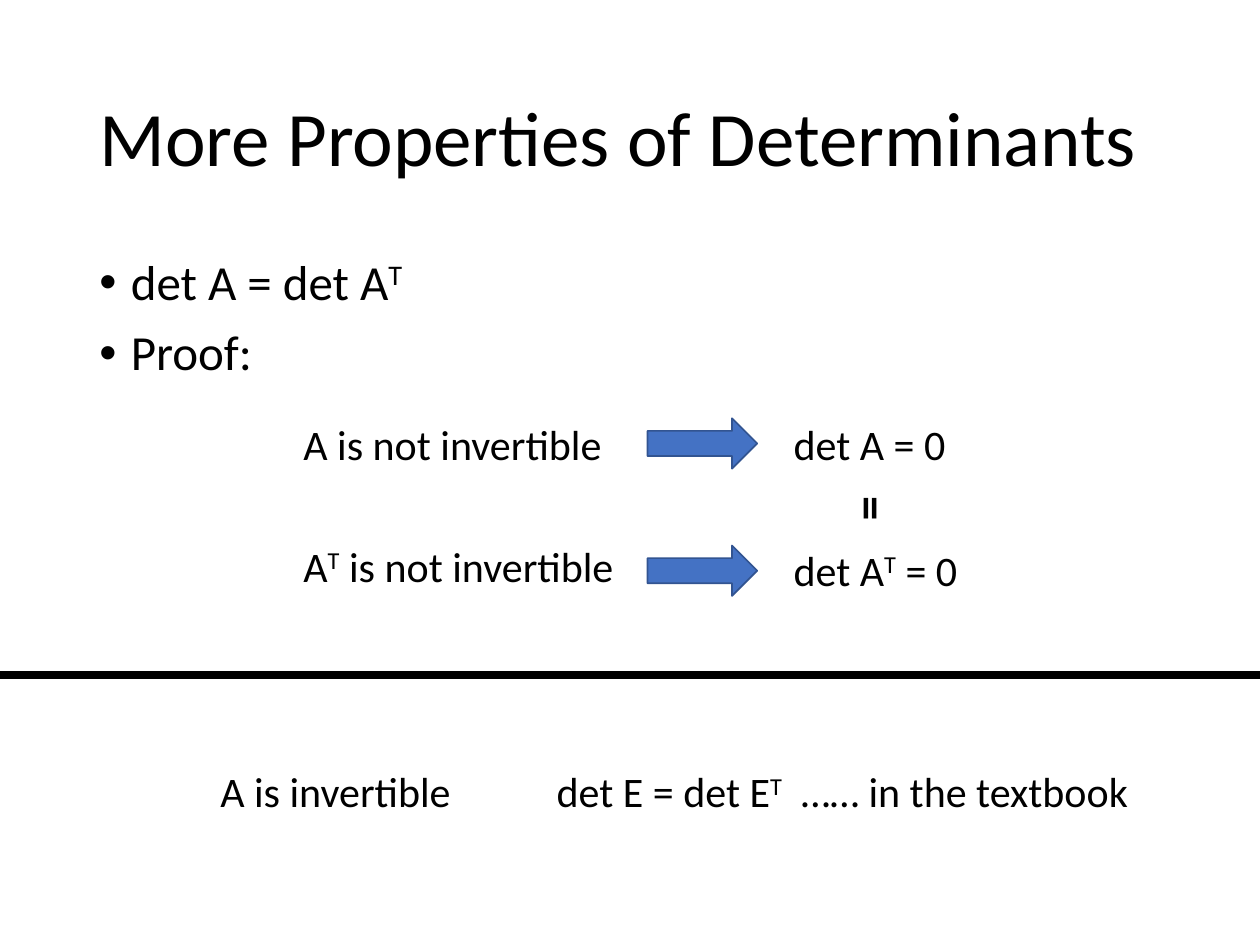
from dataclasses import dataclass

from lxml.etree import SubElement
from pptx import Presentation
from pptx.dml.color import RGBColor
from pptx.enum.shapes import MSO_CONNECTOR, MSO_SHAPE
from pptx.enum.text import MSO_ANCHOR, MSO_AUTO_SIZE, PP_ALIGN
from pptx.oxml.ns import qn
from pptx.slide import Slide
from pptx.util import Inches, Pt

COLORS = {"text": "000000", "divider": "000000", "arrow": "4472C4", "arrow_edge": "325491"}
FONT = "Calibri"
SUPERSCRIPT_MARK = "^"


@dataclass
class Label:
    lines: tuple[str, ...]
    left: float
    top: float
    width: float
    height: float = 0.5
    size: int = 24
    bold: bool = False
    bullet: bool = False
    wrap: bool = True
    grow: bool = True
    line_spacing: float = 1.0
    space_before: int = 0
    anchor: MSO_ANCHOR = MSO_ANCHOR.TOP
    align: PP_ALIGN = PP_ALIGN.LEFT
    rotation: int = 0


@dataclass
class Implication:
    premise: str
    conclusion: str
    premise_top: float
    arrow_top: float
    conclusion_top: float


LABELS = (
    Label(("More Properties of Determinants",), 0.69, 0.4, 8.62, 1.45, size=44,
          grow=False, line_spacing=0.9, anchor=MSO_ANCHOR.MIDDLE),
    Label(("det A = det A^T", "Proof:"), 0.69, 2, 8.62, 4.76, size=28,
          bullet=True, grow=False, line_spacing=0.9, space_before=10),
    Label(("A is invertible",), 1.65, 6.03, 2.67),
    Label(("det E = det E^T^  …… in the textbook",), 4.32, 6.03, 4.79, wrap=False),
    Label(("=",), 6.48, 3.75, 0.91, 0.57, size=28, bold=True,
          align=PP_ALIGN.CENTER, rotation=90),
)

IMPLICATIONS = (
    Implication("A is not invertible", "det A = 0", 3.27, 3.32, 3.27),
    Implication("A^T^ is not invertible", "det A^T^ = 0", 4.24, 4.33, 4.27),
)


def color(name: str) -> RGBColor:
    return RGBColor.from_string(COLORS[name])


def add_spans(para, line: str) -> None:
    for index, piece in enumerate(line.split(SUPERSCRIPT_MARK)):
        span = para.add_run()
        span.text = piece
        if index % 2:
            span._r.get_or_add_rPr().set("baseline", "30000")


def add_bullet(para) -> None:
    properties = para._p.get_or_add_pPr()
    properties.set("marL", str(Inches(0.25)))
    properties.set("indent", str(-Inches(0.25)))
    SubElement(properties, qn("a:buFont")).set("typeface", "Arial")
    SubElement(properties, qn("a:buChar")).set("char", "•")


def add_label(page: Slide, label: Label) -> None:
    box = page.shapes.add_textbox(
        Inches(label.left), Inches(label.top), Inches(label.width), Inches(label.height))
    box.rotation = label.rotation
    frame = box.text_frame
    frame.word_wrap = label.wrap
    frame.vertical_anchor = label.anchor
    frame.auto_size = MSO_AUTO_SIZE.SHAPE_TO_FIT_TEXT if label.grow else MSO_AUTO_SIZE.NONE
    for index, line in enumerate(label.lines):
        para = frame.add_paragraph() if index else frame.paragraphs[0]
        para.alignment = label.align
        para.line_spacing = label.line_spacing
        para.space_before = Pt(label.space_before)
        if label.bullet:
            add_bullet(para)
        para.font.name = FONT
        para.font.size = Pt(label.size)
        para.font.bold = label.bold
        para.font.color.rgb = color("text")
        add_spans(para, line)


def add_arrow(page: Slide, top: float) -> None:
    arrow = page.shapes.add_shape(
        MSO_SHAPE.RIGHT_ARROW, Inches(5.14), Inches(top), Inches(0.87), Inches(0.4))
    arrow.shadow.inherit = False
    arrow.fill.solid()
    arrow.fill.fore_color.rgb = color("arrow")
    arrow.line.color.rgb = color("arrow_edge")
    arrow.line.width = Pt(1)


def add_implication(page: Slide, step: Implication) -> None:
    add_label(page, Label((step.premise,), 2.31, step.premise_top, 2.67))
    add_arrow(page, step.arrow_top)
    add_label(page, Label((step.conclusion,), 6.2, step.conclusion_top, 2.81))


def add_divider(page: Slide, top: float, width: float) -> None:
    divider = page.shapes.add_connector(
        MSO_CONNECTOR.STRAIGHT, Inches(0), Inches(top), Inches(width), Inches(top))
    divider.line.color.rgb = color("divider")
    divider.line.width = Pt(4.5)
    SubElement(divider._element.spPr, qn("a:effectLst"))


def main() -> None:
    deck = Presentation()
    deck.slide_width = Inches(10)
    deck.slide_height = Inches(7.5)
    page = deck.slides.add_slide(deck.slide_layouts[6])
    for label in LABELS:
        add_label(page, label)
    for step in IMPLICATIONS:
        add_implication(page, step)
    add_divider(page, 5.36, 10)
    deck.save("out.pptx")


if __name__ == "__main__":
    main()
